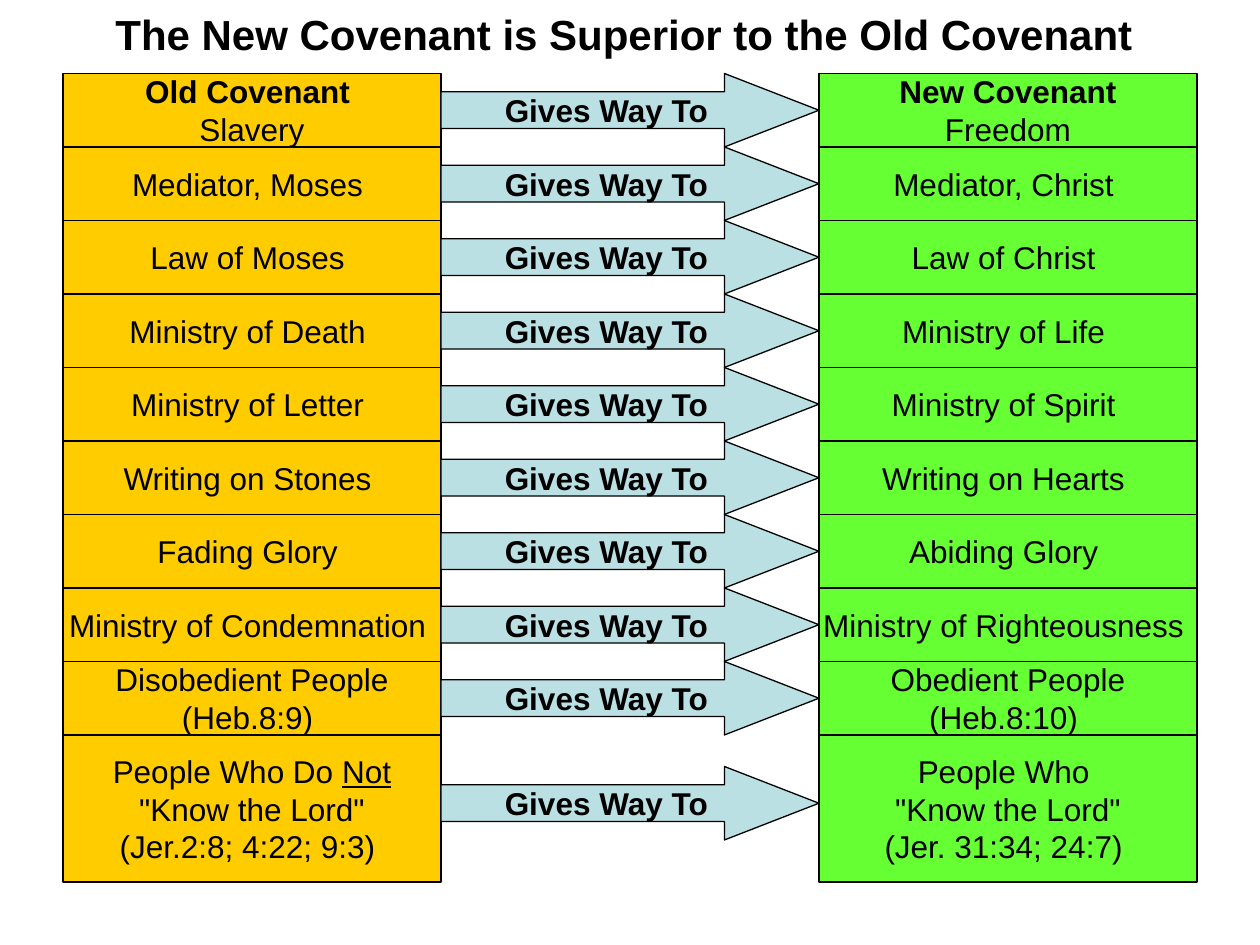
from pptx import Presentation
from pptx.dml.color import RGBColor
from pptx.enum.shapes import MSO_SHAPE
from pptx.enum.text import MSO_ANCHOR, PP_ALIGN
from pptx.util import Inches, Pt

RECT = MSO_SHAPE.RECTANGLE
ARROW = MSO_SHAPE.RIGHT_ARROW
MID = MSO_ANCHOR.MIDDLE
CENTER = PP_ALIGN.CENTER

TITLE = "The New Covenant is Superior to the Old Covenant "
LINK = "Gives Way To"
ROWS = [
    ([("Old Covenant \n", "b"), ("Slavery", "")],
     [("New Covenant\n", "b"), ("Freedom", "")]),
    ("Mediator, Moses ", "Mediator, Christ "),
    ("Law of Moses ", "Law of Christ "),
    ("Ministry of Death ", "Ministry of Life "),
    ("Ministry of Letter ", "Ministry of Spirit "),
    ("Writing on Stones ", "Writing on Hearts "),
    ("Fading Glory ", "Abiding Glory "),
    ("Ministry of Condemnation ", "Ministry of Righteousness "),
    ("Disobedient People\n(Heb.8:9) ", "Obedient People\n(Heb.8:10) "),
    ([("People Who Do ", ""), ("Not\n", "u"),
      ('"Know the Lord"\n(Jer.2:8; 4:22; 9:3) ', "")],
     'People Who \n"Know the Lord"\n(Jer. 31:34; 24:7) '),
]
COLORS = {"old": "FFCC00", "new": "66FF33", "link": "BBE0E3", "ink": "000000"}

WIDE, HIGH = 10, 7.5
EDGE = WIDE / 20
COL = (WIDE - 2 * EDGE) / 3
ROW = HIGH * 7 / 90
DROP = 0.25


def color(name):
    return RGBColor.from_string(COLORS[name])


def write(shape, runs, size, wrap=False):
    frame = shape.text_frame
    frame.word_wrap = wrap
    frame.vertical_anchor = MID
    para = frame.paragraphs[0]
    para.alignment = CENTER
    for text, mark in runs:
        for n, line in enumerate(text.split("\n")):
            if n:
                para.add_line_break()
            if line:
                run = para.add_run()
                run.text = line
                font = run.font
                font.name, font.size = "Arial", Pt(size)
                font.bold, font.underline = mark == "b", mark == "u"
                font.color.rgb = color("ink")


def block(kind, col, top, high, fill, runs):
    box = [Inches(v) for v in (EDGE + col * COL, top, COL, high)]
    shape = slide.shapes.add_shape(kind, *box)
    shape.shadow.inherit = False
    shape.fill.solid()
    shape.fill.fore_color.rgb = color(fill)
    shape.line.color.rgb = color("ink")
    shape.line.width = Pt(0.75)
    write(shape, [(runs, "")] if isinstance(runs, str) else runs, 18)
    return shape


deck = Presentation()
deck.slide_width, deck.slide_height = Inches(WIDE), Inches(HIGH)
slide = deck.slides.add_slide(deck.slide_layouts[6])

head = slide.shapes.add_textbox(Inches(EDGE), 0, Inches(3 * COL), Inches(0.53))
write(head, [(TITLE, "b")], 24, True)

for i, (old, new) in enumerate(ROWS):
    last = i == len(ROWS) - 1
    top = (i + 1) * ROW
    high = ROW * (2 if last else 1)
    block(RECT, 0, top, high, "old", old)
    block(RECT, 2, top, high, "new", new)
    drop = DROP if last else 0
    arrow = block(ARROW, 1, top + drop, ROW, "link", [(LINK, "b")])
    arrow.adjustments[0] = 0.5
    arrow.adjustments[1] = COL / 4 / ROW

deck.save("out.pptx")
